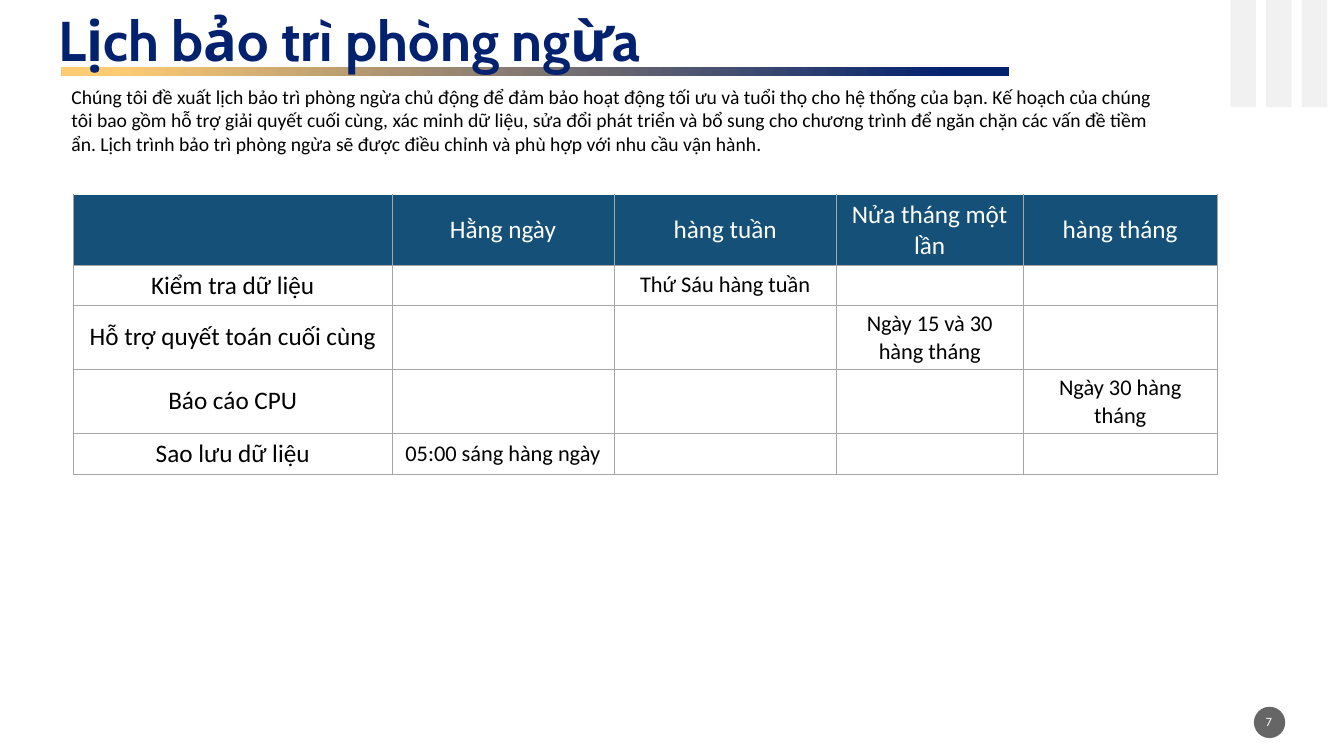
import pptx
import pptx.util
import pptx.dml.color
import pptx.enum.shapes
import pptx.enum.text
import pptx.oxml
import pptx.oxml.ns
from lxml import etree

Cm, Pt = pptx.util.Cm, pptx.util.Pt
RGB = pptx.dml.color.RGBColor
Shape = pptx.enum.shapes.MSO_SHAPE
Align = pptx.enum.text.PP_ALIGN
Anchor = pptx.enum.text.MSO_ANCHOR
qn = pptx.oxml.ns.qn

NAVY = RGB(0x02, 0x21, 0x6F)
GOLD = RGB(0xFD, 0xCB, 0x72)
BLUE = RGB(0x15, 0x50, 0x78)
PALE = RGB(0xE7, 0xE6, 0xE6)
GRAY = RGB(0xA6, 0xA6, 0xA6)
DARK = RGB(0x66, 0x66, 0x66)
BLACK = RGB(0, 0, 0)
WHITE = RGB(255, 255, 255)

HEAD = ["", "Hằng ngày", "hàng tuần", "Nửa tháng một lần", "hàng tháng"]
# Task, column of its date, date
TASKS = [
    ("Kiểm tra dữ liệu", 2, "Thứ Sáu hàng tuần"),
    ("Hỗ trợ quyết toán cuối cùng", 3, "Ngày 15 và 30 hàng tháng"),
    ("Báo cáo CPU", 4, "Ngày 30 hàng tháng"),
    ("Sao lưu dữ liệu", 1, "05:00 sáng hàng ngày"),
]
INTRO = (
    "Chúng tôi đề xuất lịch bảo trì phòng ngừa chủ động để đảm bảo hoạt động "
    "tối ưu và tuổi thọ cho hệ thống của bạn. Kế hoạch của chúng tôi bao gồm "
    "hỗ trợ giải quyết cuối cùng, xác minh dữ liệu, sửa đổi phát triển và bổ "
    "sung cho chương trình để ngăn chặn các vấn đề tiềm ẩn. Lịch trình bảo trì "
    "phòng ngừa sẽ được điều chỉnh và phù hợp với nhu cầu vận hành."
)


class Deck:
    font = "Calibri"

    def __init__(self, show):
        self.slide = show.slides.add_slide(show.slide_layouts[6])

    def shape(self, kind, box, color=None, alpha=None):
        item = self.slide.shapes.add_shape(kind, *map(Cm, box))
        item.shadow.inherit = False
        item.line.fill.background()
        if color is not None:
            item.fill.solid()
            item.fill.fore_color.rgb = color
        if alpha:
            tone = item._element.spPr.find(".//" + qn("a:srgbClr"))
            etree.SubElement(tone, qn("a:alpha"), val=str(alpha * 1000))
        return item

    def blend(self, box, start, end):
        fill = self.shape(Shape.RECTANGLE, box).fill
        fill.gradient()
        fill.gradient_angle = 180
        for stop, color, place in zip(fill.gradient_stops, (start, end), (0.06, 0.94)):
            stop.color.rgb = color
            stop.position = place

    def run(self, para, text, size, color, font=None, bold=False):
        run = para.add_run()
        run.text = text
        run.font.size = Pt(size)
        run.font.name = font or self.font
        run.font.bold = bold
        run.font.color.rgb = color

    def text(self, box, text, size, color, font=None, bold=False, space=None):
        frame = self.slide.shapes.add_textbox(*map(Cm, box)).text_frame
        frame.word_wrap = True
        para = frame.paragraphs[0]
        para.line_spacing = space
        self.run(para, text, size, color, font, bold)
        return frame

    def border(self, cell, side, color, width):
        props = cell._tc.get_or_add_tcPr()
        line = pptx.oxml.parse_xml(
            f'<a:ln{side} {pptx.oxml.ns.nsdecls("a")} w="{Pt(width)}">'
            f'<a:solidFill><a:srgbClr val="{color}"/></a:solidFill></a:ln{side}>')
        props.insert("LRTB".index(side), line)

    def cell(self, cell, text, size, head):
        cell.vertical_anchor = Anchor.MIDDLE
        if head:
            cell.fill.solid()
            cell.fill.fore_color.rgb = BLUE
        else:
            cell.fill.background()
        for side in "LRTB":
            top = head and side == "T"
            self.border(cell, side, WHITE if top else GRAY, 1 if top else 0.5)
        if text:
            para = cell.text_frame.paragraphs[0]
            para.alignment = Align.CENTER
            self.run(para, text, size, WHITE if head else BLACK)

    def table(self, left, top, wide, high, rows):
        grid = self.slide.shapes.add_table(
            len(rows), len(wide), Cm(left), Cm(top), Cm(sum(wide)), Cm(sum(high))).table
        grid.first_row = grid.horz_banding = False
        for col, width in zip(grid.columns, wide):
            col.width = Cm(width)
        for r, row in enumerate(rows):
            grid.rows[r].height = Cm(high[r])
            for c, text in enumerate(row):
                self.cell(grid.cell(r, c), text, 16 if r and c else 18, r == 0)


def main():
    show = pptx.Presentation()
    show.slide_width, show.slide_height = Cm(33.87), Cm(19.05)
    deck = Deck(show)

    # Corner bars
    for i in range(3):
        deck.shape(Shape.RECTANGLE, (31.01 + 0.9 * i, 0, 0.64, 2.7), PALE, 53)

    # Page number
    deck.shape(Shape.OVAL, (31.6, 17.81, 0.79, 0.79), DARK)
    page = deck.text((31.57, 17.93, 0.81, 0.51), "7", 9, WHITE)
    page.margin_left = page.margin_right = page.margin_top = page.margin_bottom = 0
    page.vertical_anchor = Anchor.MIDDLE
    page.paragraphs[0].alignment = Align.CENTER

    # Title and intro
    deck.blend((1.55, 1.68, 23.88, 0.23), NAVY, GOLD)
    deck.text((1.22, 0.2, 25.32, 1.68), "Lịch bảo trì phòng ngừa", 40, NAVY,
              "Cabin", True, 0.9)
    deck.text((1.55, 2.01, 28.17, 2.06), INTRO, 14, BLACK)

    # Schedule
    rows = [HEAD]
    for task, spot, date in TASKS:
        rows.append([task] + [date if c == spot else "" for c in range(1, 5)])
    deck.table(1.85, 4.9, [8.03, 5.59, 5.61, 4.7, 4.9],
               [1.65, 0.99, 1.04, 1.04, 1.04], rows)

    show.save("out.pptx")


if __name__ == "__main__":
    main()
